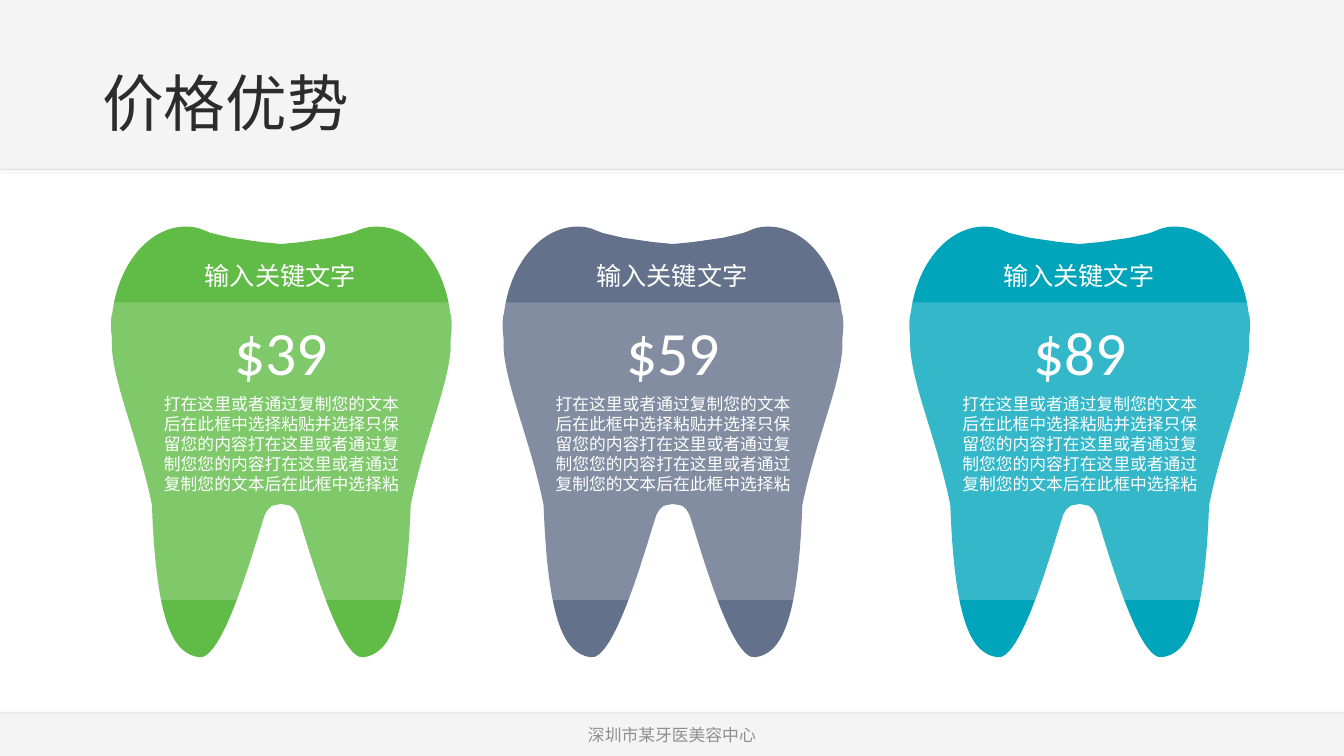
from dataclasses import dataclass

from lxml import etree
from pptx import Presentation
from pptx import util as u
from pptx.dml.color import RGBColor
from pptx.enum import shapes, text
from pptx.oxml import ns


@dataclass(frozen=True)
class Theme:
    font: str = "Calibri"
    ink: str = "2C2C2C"
    white: str = "FFFFFF"
    shadow: str = "000000"
    green: str = "60BC46"
    slate: str = "63718B"
    teal: str = "00A5BC"
    large: int = 44
    heading: int = 18
    small: int = 12


theme = Theme()
WIDTH, HEIGHT = 33.87, 19.05

DESCRIPTION = ("打在这里或者通过复制您的文本后在此框中选择粘贴并选择只保留您的内容"
               "打在这里或者通过复制您您的内容打在这里或者通过复制您的文本后在此框中选择粘")

# Right halves, in cm from each tooth's axis: one point is a line, three are a curve.
TOOTH_HALF = [
    [(0, 6.15)], [(0.51, 6.1)], [(1.27, 5.99)], [(1.78, 5.87)], [(2.03, 5.77)],
    [(2.14, 5.73), (2.27, 5.71), (2.4, 5.71)],
    [(3.3, 5.71), (4.06, 6.6), (4.24, 7.77)],
    [(4.26, 7.9)], [(4.28, 7.97)],
    [(4.29, 8.08), (4.3, 8.2), (4.29, 8.31)],
    [(4.27, 8.53)],
    [(4.27, 8.61), (4.27, 8.69), (4.27, 8.76)],
    [(4.21, 9.75), (3.58, 11.13), (3.26, 12.73)],
    [(3.15, 15.8), (2.69, 16.46), (2.09, 16.56)],
    [(1.5, 16.69), (0.76, 14.05), (0.42, 12.98)],
    [(0.4, 12.93), (0.36, 12.88), (0.33, 12.83)],
    [(0.24, 12.75)], [(0.17, 12.73)], [(0, 12.7)],
]
BAND_HALF = [
    [(0, 7.62)], [(4.29, 7.62)],
    [(4.37, 8.81), (4.27, 9.6), (4.05, 11.02)],
    [(3.68, 13.13), (3.45, 13.74), (3.07, 15.12)],
    [(0, 15.12)],
]


def set_opacity(element, percent):
    for color in element.iter(ns.qn("a:srgbClr")):
        etree.SubElement(color, ns.qn("a:alpha"), val=str(percent * 1000))


def add_text(box, words, size, color=theme.white, align=text.PP_ALIGN.CENTER,
             anchor=text.MSO_ANCHOR.BOTTOM, after=0, grow=False):
    """Add a wrapped text box at box (left, top, width, height in cm); return its paragraph."""
    frame = slide.shapes.add_textbox(*map(u.Cm, box)).text_frame
    frame.word_wrap = True
    frame.vertical_anchor = anchor
    if grow:
        frame.auto_size = text.MSO_AUTO_SIZE.SHAPE_TO_FIT_TEXT
    paragraph = frame.paragraphs[0]
    paragraph.text = words
    paragraph.alignment = align
    paragraph.space_after = u.Pt(after)
    font = paragraph.runs[0].font
    font.name, font.size = theme.font, u.Pt(size)
    font.color.rgb = RGBColor.from_string(color)
    return paragraph


deck = Presentation()
deck.slide_width, deck.slide_height = u.Cm(WIDTH), u.Cm(HEIGHT)
slide = deck.slides.add_slide(deck.slide_layouts[6])

# Header and footer strips, each with a shadowed edge
for top, height, edge, shadow_opacity, shadow_angle in [
    (0, 4.27, 4.27, 100, 90),
    (17.96, 1.09, 17.96, 40, 270),
]:
    strip = slide.shapes.add_shape(shapes.MSO_SHAPE.RECTANGLE,
                                   0, u.Cm(top), u.Cm(WIDTH), u.Cm(height))
    strip.shadow.inherit = False
    strip.line.fill.background()
    strip.fill.solid()
    strip.fill.fore_color.rgb = RGBColor.from_string(theme.ink)
    set_opacity(strip.fill._xPr, 5)

    rule = slide.shapes.add_connector(shapes.MSO_CONNECTOR.STRAIGHT,
                                      0, u.Cm(edge), u.Cm(WIDTH), u.Cm(edge))
    rule.line.width = u.Pt(0.5)
    rule.line.color.rgb = RGBColor.from_string(theme.ink)
    properties = rule._element.spPr
    set_opacity(properties, 10)
    effects = etree.SubElement(properties, ns.qn("a:effectLst"))
    cast = etree.SubElement(effects, ns.qn("a:outerShdw"), blurRad=str(u.Pt(2)),
                            dist=str(u.Pt(1)), dir=str(shadow_angle * 60000))
    etree.SubElement(cast, ns.qn("a:srgbClr"), val=theme.shadow)
    set_opacity(effects, shadow_opacity)

title = add_text((2.33, 1.03, 29.18, 2.62), "价格优势", theme.large, theme.ink,
                 text.PP_ALIGN.LEFT)
title.line_spacing = 0.9
clinic = add_text((11.22, 18, 11.43, 1.01), "深圳市某牙医美容中心", theme.small, theme.ink,
                  anchor=text.MSO_ANCHOR.MIDDLE)
set_opacity(clinic._p, 50)

# Complete each half with its mirror image, walked backwards
outlines = []
for half in (TOOTH_HALF, BAND_HALF):
    mirrored = []
    for previous, segment in reversed(list(zip(half, half[1:]))):
        backwards = segment[-2::-1] + previous[-1:]
        mirrored.append([(-x, y) for x, y in backwards])
    outlines.append(half + mirrored)

# Price teeth
for axis, color, price in [
    (7.09, theme.green, "$39"),
    (16.96, theme.slate, "$59"),
    (27.21, theme.teal, "$89"),
]:
    for outline, fill, opacity in zip(outlines, (color, theme.white), (100, 20)):
        start, *rest = [(u.Cm(axis + x), u.Cm(y)) for segment in outline for x, y in segment]
        builder = slide.shapes.build_freeform(*start)
        builder.add_line_segments(rest, close=True)
        part = builder.convert_to_shape()

        # Turn each run of three control points into one curve
        steps = iter(list(part._element.iter(ns.qn("a:lnTo"))))
        for segment in outline[1:]:
            step = next(steps)
            if len(segment) == 3:
                step.addprevious(curve := etree.Element(ns.qn("a:cubicBezTo")))
                for point in (step, next(steps), next(steps)):
                    curve.append(point[0])
                    point.getparent().remove(point)

        part.shadow.inherit = False
        part.line.fill.background()
        part.fill.solid()
        part.fill.fore_color.rgb = RGBColor.from_string(fill)
        if opacity < 100:
            set_opacity(part.fill._xPr, opacity)

    for offset, top, height, words, size, anchor in [
        (-3.31, 9.79, 2.82, DESCRIPTION, theme.small, text.MSO_ANCHOR.TOP),
        (-3.31, 7.77, 2.13, price, theme.large, text.MSO_ANCHOR.BOTTOM),
        (-3.34, 6.43, 1.02, "输入关键文字", theme.heading, text.MSO_ANCHOR.BOTTOM),
    ]:
        add_text((axis + offset, top, 6.63, height), words, size,
                 anchor=anchor, after=10, grow=True)

deck.save("out.pptx")
